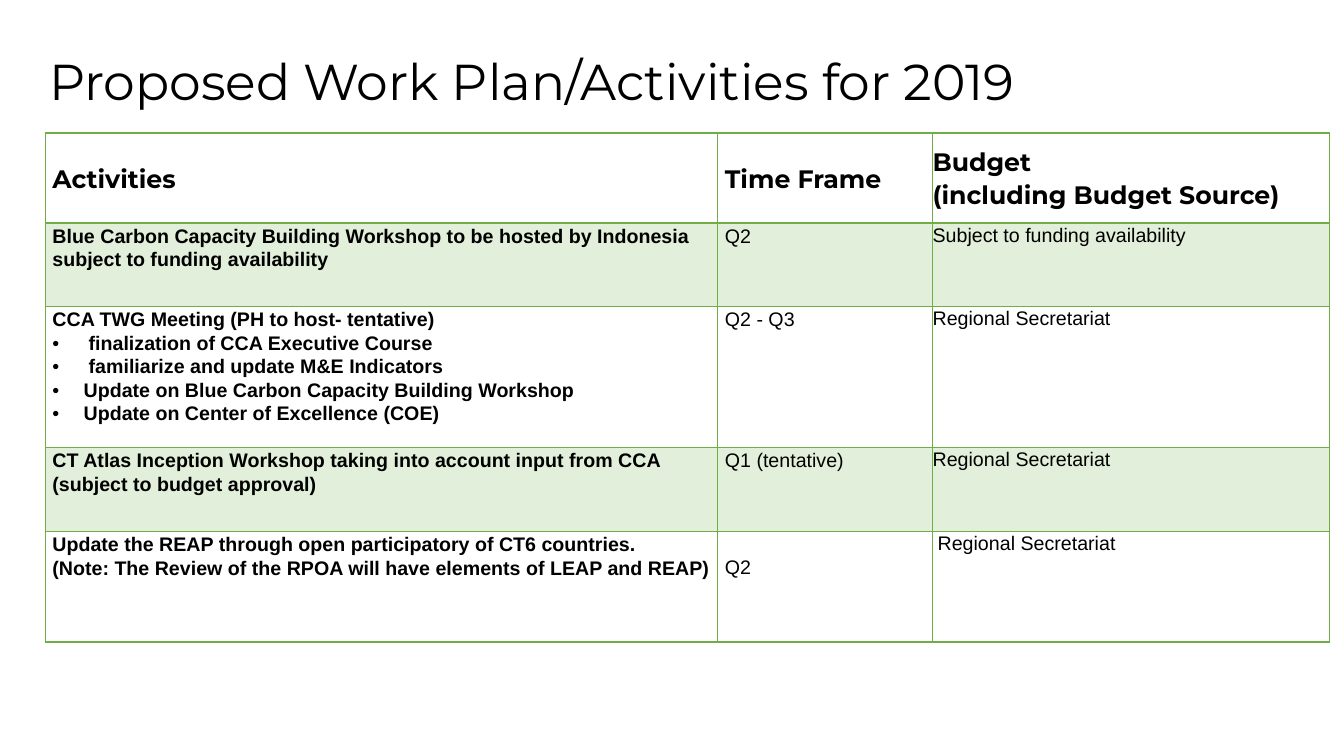
"""Build the slide with the proposed work plan for 2019."""
from dataclasses import dataclass

from lxml.etree import SubElement
from pptx import Presentation
from pptx.dml.color import RGBColor
from pptx.enum.text import MSO_ANCHOR
from pptx.oxml.ns import qn
from pptx.util import Emu, Pt

SCALE = 9144
GREEN, PALE, BLACK = "70AD47", "E2EFDA", "000000"
COLS = [667, 213, 394]
ROWS = [89, 83, 140, 83, 110]


@dataclass(frozen=True)
class Line:
    """One paragraph, with a hanging indent in px if it has a bullet."""
    text: str
    hang: int = 0


@dataclass(frozen=True)
class Style:
    """The look of a run of text."""
    font: str
    size: int
    bold: bool
    space: float


@dataclass(frozen=True)
class Entry:
    """The lines of one cell, with extra left and top insets in px."""
    lines: list[Line]
    left: int = 0
    top: int = 0


TITLE = Style("Montserrat", 36, False, 0.9)
HEAD = Style("Montserrat", 18, True, 1.06)
TASK = Style("Arial", 14, True, 1.07)
PLAIN = Style("Arial", 14, False, 1.07)

PLAN = [
    [
        Entry([Line("Activities")]),
        Entry([Line("Time Frame")]),
        Entry([Line("Budget"), Line("(including Budget Source)")]),
    ],
    [
        Entry([Line("Blue Carbon Capacity Building Workshop to be hosted by "
                    "Indonesia subject to funding availability")]),
        Entry([Line("Q2")]),
        Entry([Line("Subject to funding availability")]),
    ],
    [
        Entry([
            Line("CCA TWG Meeting (PH to host- tentative)"),
            Line("finalization of CCA Executive Course", 36),
            Line("familiarize and update M&E Indicators", 36),
            Line("Update on Blue Carbon Capacity Building Workshop", 31),
            Line("Update on Center of Excellence (COE)", 31),
        ]),
        Entry([Line("Q2 - Q3")]),
        Entry([Line("Regional Secretariat")]),
    ],
    [
        Entry([Line("CT Atlas Inception Workshop taking into account input "
                    "from CCA (subject to budget approval)")]),
        Entry([Line("Q1 (tentative)")]),
        Entry([Line("Regional Secretariat")]),
    ],
    [
        Entry([
            Line("Update the REAP through open participatory of CT6 countries."),
            Line("(Note: The Review of the RPOA will have elements of LEAP "
                 "and REAP)"),
        ]),
        Entry([Line("Q2")], top=23),
        Entry([Line("Regional Secretariat")], left=5),
    ],
]


def px(count: int) -> Emu:
    """Turn px into EMU."""
    return Emu(count * SCALE)


def paint(color, code: str) -> None:
    """Set a fill to a solid colour."""
    color.solid()
    color.fore_color.rgb = RGBColor.from_string(code)


def write(frame, lines: list[Line], style: Style) -> None:
    """Write lines into a text frame."""
    for spot, line in enumerate(lines):
        para = frame.add_paragraph() if spot else frame.paragraphs[0]
        if line.hang:
            props = para._p.get_or_add_pPr()
            props.set("marL", str(px(line.hang)))
            props.set("indent", str(-px(line.hang)))
            SubElement(props, qn("a:buFont"), typeface="Arial")
            SubElement(props, qn("a:buChar"), char="•")
        para.line_spacing = style.space
        run = para.add_run()
        run.text = line.text
        run.font.name = style.font
        run.font.size = Pt(style.size)
        run.font.bold = style.bold
        paint(run.font.fill, BLACK)


def edge(cell, side: str, width: int) -> None:
    """Draw one border of a cell, with its width in points."""
    props = cell._tc.get_or_add_tcPr()
    rule = SubElement(props, qn(f"a:ln{side}"), w=str(Pt(width)))
    fill = SubElement(rule, qn("a:solidFill"))
    SubElement(fill, qn("a:srgbClr"), val=GREEN)


def draw(cell, entry: Entry, row: int, col: int) -> None:
    """Draw one cell of the plan."""
    inset = 0 if col == 2 else 7
    cell.margin_left = px(inset + entry.left)
    cell.margin_right = px(inset)
    cell.margin_top = px((0 if col == 2 else 1) + entry.top)
    cell.margin_bottom = 0
    cell.vertical_anchor = MSO_ANCHOR.TOP if row else MSO_ANCHOR.MIDDLE
    widths = {"L": 1, "R": 1, "T": 2 if row == 1 else 1, "B": 1 if row else 2}
    for side, width in widths.items():
        edge(cell, side, width)
    if row % 2:
        paint(cell.fill, PALE)
    else:
        cell.fill.background()
    style = HEAD if row == 0 else PLAIN if col else TASK
    write(cell.text_frame, entry.lines, style)


def main() -> None:
    """Build and save the slide."""
    deck = Presentation()
    deck.slide_width, deck.slide_height = px(1333), px(750)
    slide = deck.slides.add_slide(deck.slide_layouts[6])

    box = slide.shapes.add_textbox(px(39), px(11), px(1150), px(145))
    frame = box.text_frame
    frame.word_wrap = True
    frame.vertical_anchor = MSO_ANCHOR.MIDDLE
    write(frame, [Line("Proposed Work Plan/Activities for 2019")], TITLE)

    table = slide.shapes.add_table(
        len(ROWS), len(COLS), px(45), px(132), px(sum(COLS)), px(sum(ROWS))
    ).table
    table.first_row = table.horz_banding = False
    for part, width in zip(table.columns, COLS):
        part.width = px(width)
    for part, height in zip(table.rows, ROWS):
        part.height = px(height)
    for row, entries in enumerate(PLAN):
        for col, entry in enumerate(entries):
            draw(table.cell(row, col), entry, row, col)

    deck.save("out.pptx")


if __name__ == "__main__":
    main()
